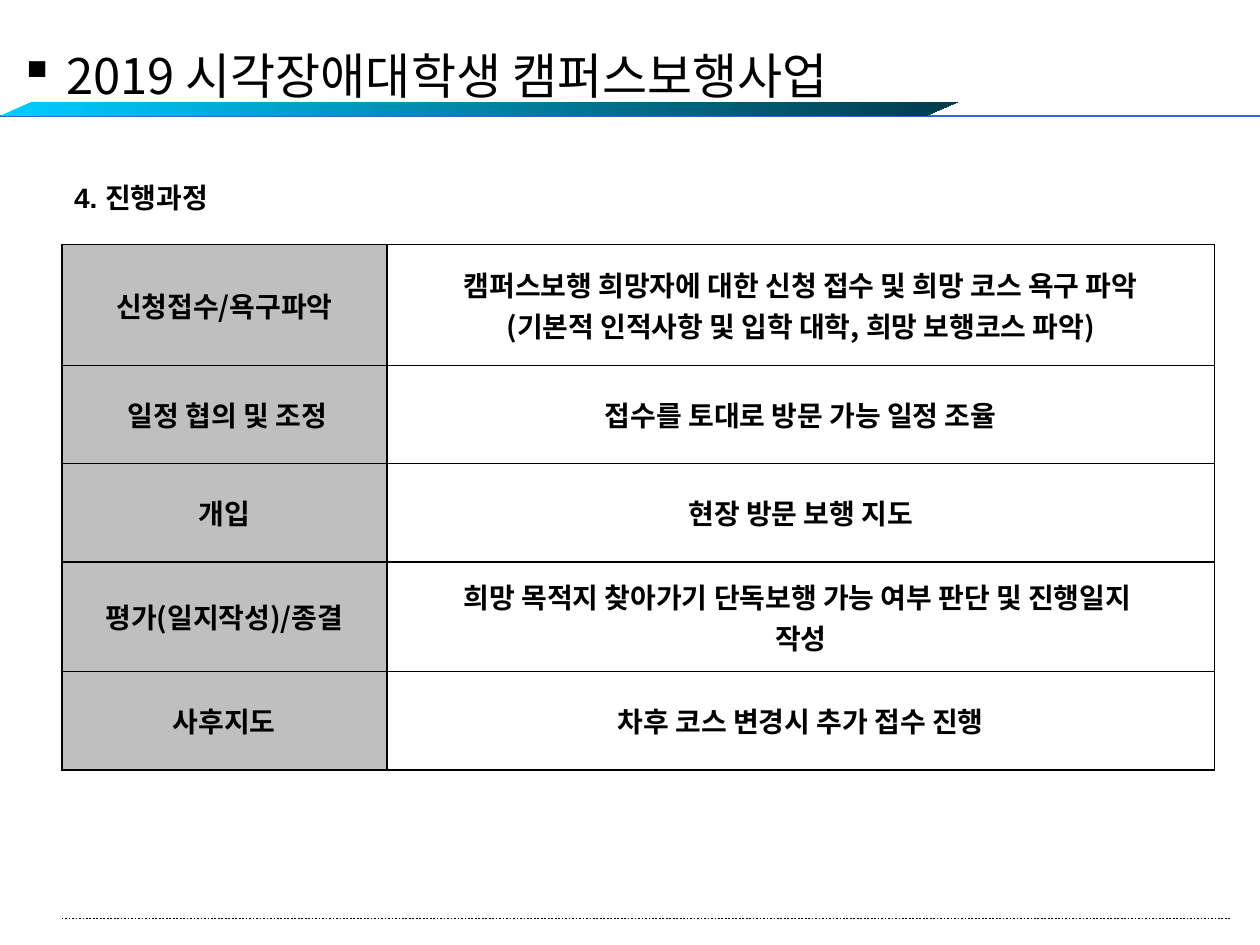
import pptx
import pptx.util
import pptx.dml.color
import pptx.enum.dml
import pptx.enum.shapes
import pptx.enum.text
import pptx.oxml
import pptx.oxml.ns
from lxml import etree
from pptx.util import Inches, Pt

COLORS = {
    "text": "000000",
    "rule": "3366CC",
    "label": "BFBFBF",
    "cell": "FFFFFF",
    "bar_start": "00CCFF",
    "bar_end": "003C4B",
}
FONT = "Noto Sans CJK KR"
rgb = pptx.dml.color.RGBColor.from_string
qn = pptx.oxml.ns.qn


def style(paragraph, size, bold, latin=FONT):
    font = paragraph.font
    font.size, font.bold, font.name = Pt(size), bold, latin
    font.color.rgb = rgb(COLORS["text"])
    for run in paragraph.runs:
        properties = run._r.get_or_add_rPr()
        etree.SubElement(properties, qn("a:latin"), typeface=latin)
        etree.SubElement(properties, qn("a:ea"), typeface=FONT)


def add_rule(left, right, y, color, width):
    line = slide.shapes.add_connector(
        pptx.enum.shapes.MSO_CONNECTOR.STRAIGHT,
        Inches(left), Inches(y), Inches(right), Inches(y))
    line.line.color.rgb = rgb(color)
    line.line.width = Pt(width)
    etree.SubElement(line._element.spPr, qn("a:effectLst"))
    return line


presentation = pptx.Presentation()
presentation.slide_width, presentation.slide_height = Inches(10), Inches(7.5)
slide = presentation.slides.add_slide(presentation.slide_layouts[5])

# Rules under the title and at the foot
add_rule(0, 10, 0.92, COLORS["rule"], 0.75)
foot_rule = add_rule(0.49, 9.77, 7.29, COLORS["text"], 1)
foot_rule.line.dash_style = pptx.enum.dml.MSO_LINE.ROUND_DOT

# Title with a square bullet
title = slide.shapes.title
title.left, title.top = Inches(0.05), Inches(0.31)
title.width, title.height = Inches(7.39), Inches(0.57)
frame = title.text_frame
frame.text = " 2019 시각장애대학생 캠퍼스보행사업"
frame.word_wrap = False
frame.auto_size = pptx.enum.text.MSO_AUTO_SIZE.NONE
frame.vertical_anchor = pptx.enum.text.MSO_ANCHOR.TOP
paragraph = frame.paragraphs[0]
paragraph.alignment = pptx.enum.text.PP_ALIGN.LEFT
style(paragraph, 28, False)
bullet = etree.Element(qn("a:buChar"), char="▪")
paragraph._p.pPr.find(qn("a:defRPr")).addprevious(bullet)

# Gradient bar
bar = slide.shapes.add_shape(
    pptx.enum.shapes.MSO_SHAPE.PARALLELOGRAM,
    Inches(0), Inches(0.81), Inches(7.6), Inches(0.11))
bar.adjustments[0] = 2.3
bar.shadow.inherit = False
bar.line.fill.background()
bar.fill.gradient()
bar.fill.gradient_angle = 0
for stop, name in zip(bar.fill.gradient_stops, ("bar_start", "bar_end")):
    stop.color.rgb = rgb(COLORS[name])

# Section heading
heading = slide.shapes.add_textbox(Inches(0.49), Inches(1.25), Inches(9.06), Inches(2.52))
heading.text_frame.word_wrap = True
heading.text_frame.text = "4. 진행과정"
paragraph = heading.text_frame.paragraphs[0]
paragraph.line_spacing = 1.5
style(paragraph, 16, True, "Arial")

# Process table: label, description, row height
rows = [
    ("신청접수/욕구파악",
     "캠퍼스보행 희망자에 대한 신청 접수 및 희망 코스 욕구 파악\n"
     "(기본적 인적사항 및 입학 대학, 희망 보행코스 파악)", 0.96),
    (" 일정 협의 및 조정", "접수를 토대로 방문 가능 일정 조율", 0.78),
    ("개입", "현장 방문 보행 지도", 0.78),
    ("평가(일지작성)/종결",
     "희망 목적지 찾아가기 단독보행 가능 여부 판단 및 진행일지 \n작성", 0.87),
    ("사후지도", "차후 코스 변경시 추가 접수 진행", 0.78),
]
table = slide.shapes.add_table(
    len(rows), 2, Inches(0.49), Inches(1.94), Inches(9.15), Inches(4.17)).table
table.first_row = table.horz_banding = False
for column, width in zip(table.columns, (2.58, 6.57)):
    column.width = Inches(width)

for row_index, (label, description, height) in enumerate(rows):
    table.rows[row_index].height = Inches(height)
    for column_index, text in enumerate((label, description)):
        cell = table.cell(row_index, column_index)
        cell.text = text
        cell.vertical_anchor = pptx.enum.text.MSO_ANCHOR.MIDDLE
        for paragraph in cell.text_frame.paragraphs:
            paragraph.alignment = pptx.enum.text.PP_ALIGN.CENTER
            style(paragraph, 16, True)
        # Borders come before the fill in the cell properties
        properties = cell._tc.get_or_add_tcPr()
        for side in ("lnL", "lnR", "lnT", "lnB"):
            border = etree.SubElement(properties, qn("a:" + side), w=str(Pt(1)))
            fill = etree.SubElement(border, qn("a:solidFill"))
            etree.SubElement(fill, qn("a:srgbClr"), val=COLORS["text"])
        cell.fill.solid()
        cell.fill.fore_color.rgb = rgb(COLORS["cell" if column_index else "label"])

presentation.save("out.pptx")
